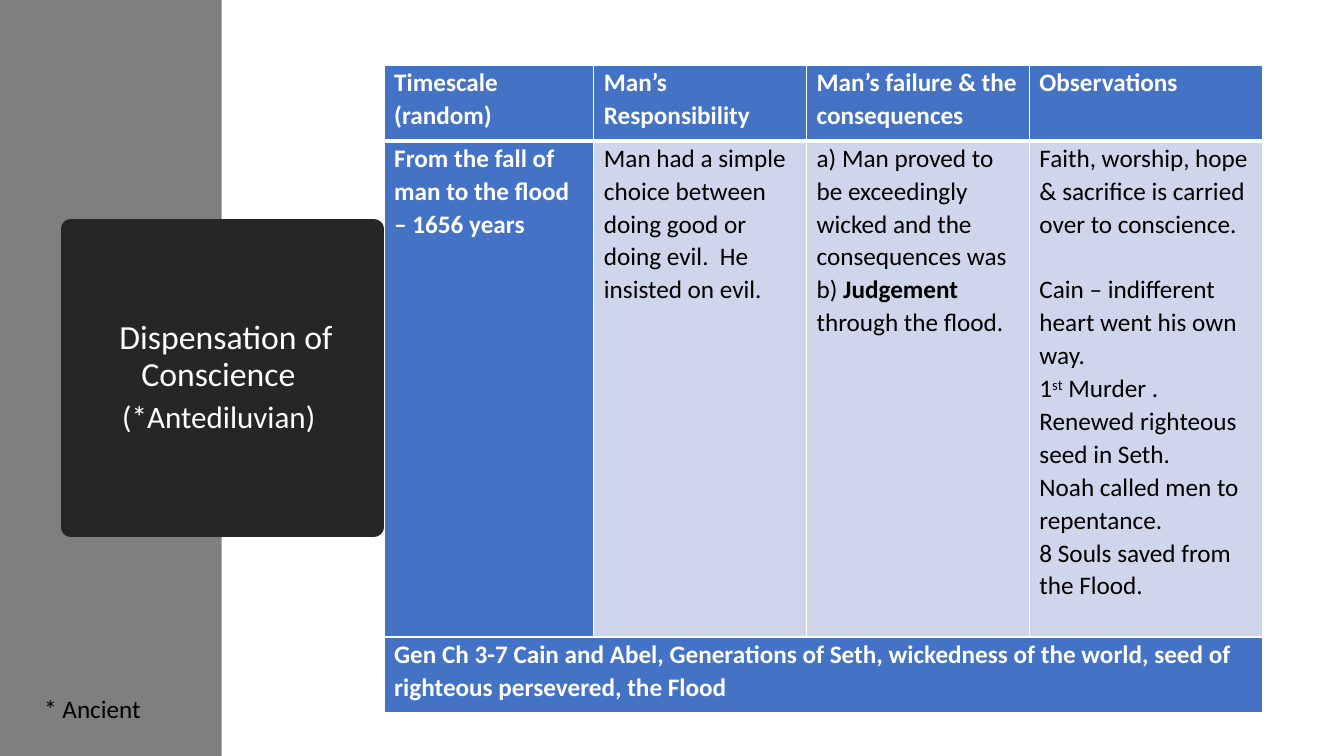
from dataclasses import dataclass

from lxml import etree
from pptx import Presentation
from pptx.dml.color import RGBColor
from pptx.enum.shapes import MSO_SHAPE as Shape
from pptx.enum.text import MSO_ANCHOR as Anchor, MSO_AUTO_SIZE as AutoSize, PP_ALIGN as Align
from pptx.oxml.ns import qn
from pptx.util import Inches, Pt


@dataclass(frozen=True)
class Theme:
    font: str = "Calibri"
    white: str = "FFFFFF"
    black: str = "000000"
    band: str = "7F7F7F"
    circle: str = "262626"
    accent: str = "4472C4"
    pale: str = "CFD5EA"
    title_size: float = 24.1
    subtitle_size: float = 22.2
    body_size: float = 18
    body_leading: float = 1.07
    blank_line: float = 23.5


THEME = Theme()

HEADINGS = ["Timescale (random)", "Man’s Responsibility",
            "Man’s failure & the consequences", "Observations"]
# A cell is a list of paragraphs; a paragraph is text or a list of (text, style) runs
DETAILS = [
    ["From the fall of man to the flood – 1656 years"],
    ["Man had a simple choice between doing good or doing evil.  He insisted on evil."],
    ["a) Man proved to be exceedingly wicked and the consequences was",
     [("b) ", ""), ("Judgement", "bold"), (" through the flood.", "")]],
    ["Faith, worship, hope & sacrifice is carried over to conscience.",
     "Cain – indifferent heart went his own way.",
     [("1", ""), ("st", "superscript"), (" Murder .", "")],
     "Renewed righteous seed in Seth.",
     "Noah called men to repentance.",
     "8 Souls saved from the Flood."],
]
SUMMARY = ("Gen Ch 3-7 Cain and Abel, Generations of Seth, wickedness of the world, "
           "seed of righteous persevered, the Flood")


def paint(fill, color):
    fill.solid()
    fill.fore_color.rgb = RGBColor.from_string(color)


def write(paragraph, content, size=THEME.body_size, color=THEME.black, bold=False,
          align=Align.LEFT, leading=1.0, after=0):
    paragraph.alignment = align
    paragraph.line_spacing = leading
    paragraph.space_before = Pt(0)
    paragraph.space_after = Pt(after)
    runs = [(content, "")] if isinstance(content, str) else content
    for text, style in runs:
        run = paragraph.add_run()
        run.text = text
        run.font.name = THEME.font
        run.font.size = Pt(size)
        run.font.bold = bold or style == "bold"
        run.font.color.rgb = RGBColor.from_string(color)
        if style == "superscript":
            run.font._element.set("baseline", "30000")


def add_band(slide, left, top, width, height):
    band = slide.shapes.add_shape(Shape.RECTANGLE, Inches(left), Inches(top),
                                  Inches(width), Inches(height))
    band.shadow.inherit = False
    paint(band.fill, THEME.band)
    band.line.fill.background()


def add_title_circle(slide, left, top, width, height):
    title = slide.shapes.title
    title.left, title.top = Inches(left), Inches(top)
    title.width, title.height = Inches(width), Inches(height)
    # Round outline, stacked above the band
    outline = etree.SubElement(title._element.spPr, qn("a:prstGeom"), prst="ellipse")
    etree.SubElement(outline, qn("a:avLst"))
    slide.shapes._spTree.append(title._element)
    paint(title.fill, THEME.circle)
    paint(title.line.fill, THEME.circle)
    title.line.width = Pt(13.75)

    frame = title.text_frame
    frame.word_wrap = True
    frame.auto_size = AutoSize.NONE
    frame.vertical_anchor = Anchor.MIDDLE
    style = dict(color=THEME.white, align=Align.CENTER, leading=0.9, after=6)
    write(frame.paragraphs[0], " Dispensation of Conscience ", size=THEME.title_size, **style)
    write(frame.add_paragraph(), "(*Antediluvian) ", size=THEME.subtitle_size, **style)


def set_borders(cell, top=1, bottom=1):
    properties = cell._tc.get_or_add_tcPr()
    for side, width in (("lnL", 1), ("lnR", 1), ("lnT", top), ("lnB", bottom)):
        line = etree.SubElement(properties, qn(f"a:{side}"), w=str(Pt(width)))
        fill = etree.SubElement(line, qn("a:solidFill"))
        etree.SubElement(fill, qn("a:srgbClr"), val=THEME.white)


def fill_cell(cell, paragraphs, strong, gap=0, **borders):
    set_borders(cell, **borders)
    paint(cell.fill, THEME.accent if strong else THEME.pale)
    cell.margin_left = cell.margin_right = Inches(0.1)
    cell.margin_top = cell.margin_bottom = 0
    frame = cell.text_frame
    for index, content in enumerate(paragraphs):
        paragraph = frame.add_paragraph() if index else frame.paragraphs[0]
        write(paragraph, content, color=THEME.white if strong else THEME.black,
              bold=strong, leading=THEME.body_leading, after=0 if index else gap)


def add_dispensation_table(slide, left, top, columns, rows):
    table = slide.shapes.add_table(len(rows), len(columns), Inches(left), Inches(top),
                                   Inches(sum(columns)), Inches(sum(rows))).table
    for column, width in zip(table.columns, columns):
        column.width = Inches(width)
    for row, height in zip(table.rows, rows):
        row.height = Inches(height)

    last = len(columns) - 1
    for index, (heading, detail) in enumerate(zip(HEADINGS, DETAILS)):
        fill_cell(table.cell(0, index), [heading], strong=True, bottom=3)
        fill_cell(table.cell(1, index), detail, strong=index == 0, top=3,
                  gap=THEME.blank_line if index == last else 0)
    # Summary across the full width
    table.cell(2, 0).merge(table.cell(2, last))
    fill_cell(table.cell(2, 0), [SUMMARY], strong=True)


def add_footnote(slide, left, top, width, height):
    box = slide.shapes.add_textbox(Inches(left), Inches(top), Inches(width), Inches(height))
    box.text_frame.word_wrap = True
    write(box.text_frame.paragraphs[0], "* Ancient")


def main():
    presentation = Presentation()
    presentation.slide_width, presentation.slide_height = Inches(13.33), Inches(7.5)
    slide = presentation.slides.add_slide(presentation.slide_layouts[5])
    add_band(slide, 0, 0, 2.2, 7.5)
    add_title_circle(slide, 0.7, 2.27, 3.01, 2.96)
    add_dispensation_table(slide, 3.81, 0.65, columns=[2.08, 2.11, 2.21, 2.31],
                           rows=[0.75, 4.92, 0.75])
    add_footnote(slide, 0.34, 6.83, 1.56, 0.4)
    presentation.save("out.pptx")


if __name__ == "__main__":
    main()
